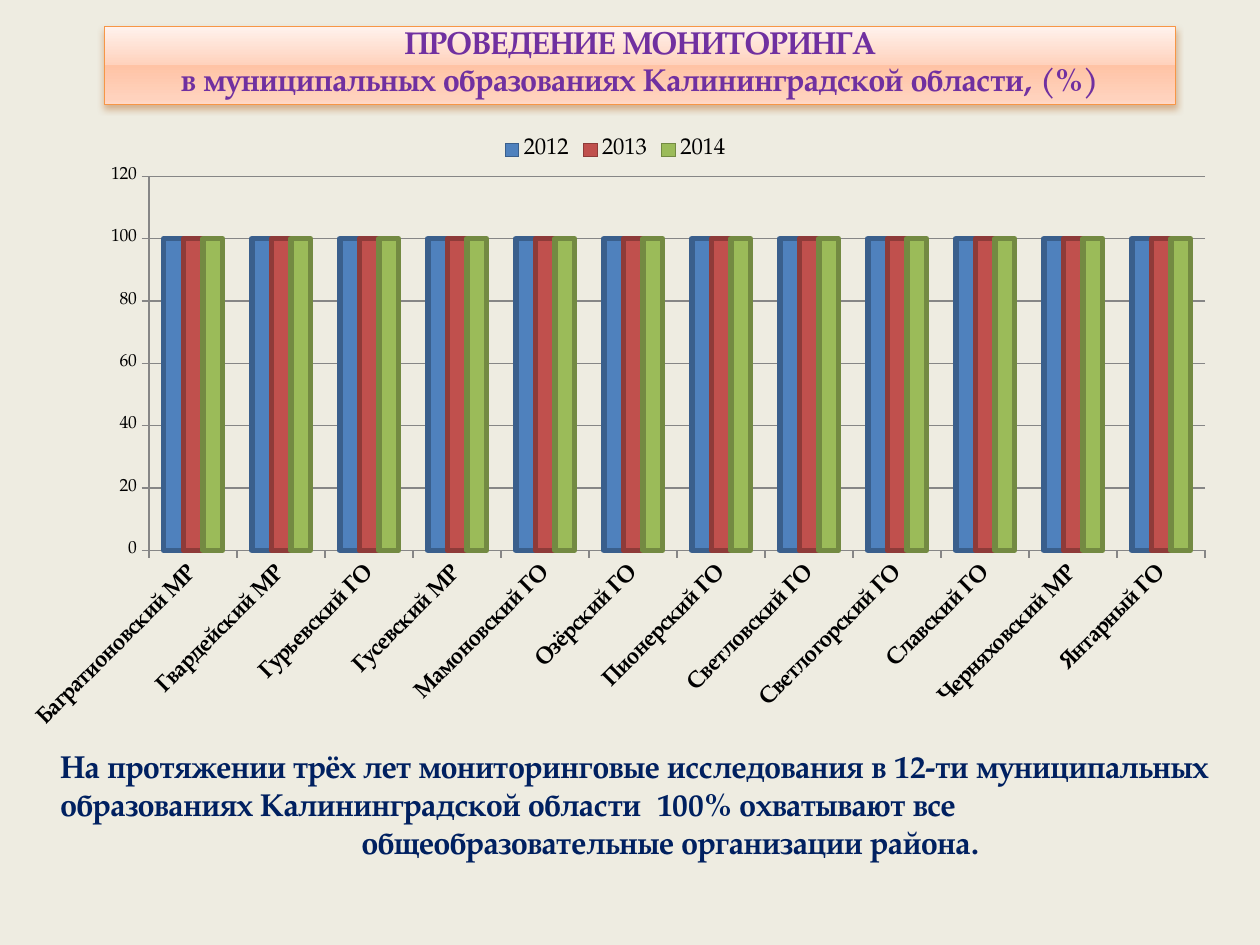
from dataclasses import dataclass

from lxml.etree import SubElement
from pptx import Presentation
from pptx.chart.data import CategoryChartData
from pptx.dml.color import RGBColor
from pptx.enum.chart import XL_CHART_TYPE as Kind, XL_LEGEND_POSITION as Spot, XL_TICK_MARK as Tick
from pptx.enum.text import MSO_ANCHOR as Anchor, MSO_AUTO_SIZE as Fit, PP_ALIGN as Align
from pptx.oxml import parse_xml
from pptx.oxml.ns import nsdecls, qn
from pptx.util import Inches, Pt


@dataclass(frozen=True)
class Theme:
    face: str = "TeX Gyre Pagella"
    back: str = "EEECE1"
    head: str = "7030A0"
    edge: str = "F79646"
    shade: str = "AD560F"
    note: str = "002060"
    ink: str = "000000"
    grid: str = "868686"
    glow: tuple = ((0, "FFF2ED"), (49, "FFD2BD"), (49, "FFC3A5"), (92, "FFD2BD"), (100, "FFD9C8"))
    bars: tuple = (("4F81BD", "3A5F8C"), ("C0504D", "8E3B39"), ("9BBB59", "738A42"))
    large: int = 18
    mid: int = 13
    small: int = 10


AREAS = ["Багратионовский МР", "Гвардейский МР", "Гурьевский ГО", "Гусевский МР",
         "Мамоновский ГО", "Озёрский ГО", "Пионерский ГО", "Светловский ГО",
         "Светлогорский ГО", "Славский ГО", "Черняховский МР", "Янтарный ГО"]
YEARS = ["2012", "2013", "2014"]
HEAD = "ПРОВЕДЕНИЕ МОНИТОРИНГА\vв муниципальных образованиях Калининградской области, (%)"
NOTE = ("На протяжении трёх лет мониторинговые исследования в 12-ти муниципальных "
        "образованиях Калининградской области  100% охватывают все")
TAIL = "общеобразовательные организации района."


def tint(code):
    return RGBColor.from_string(code)


def place(shape, box):
    shape.left, shape.top, shape.width, shape.height = map(Inches, box)


class Deck:
    def __init__(self, theme):
        self.theme = theme
        self.file = Presentation()
        self.file.slide_width, self.file.slide_height = Inches(10), Inches(7.5)
        self.slide = self.file.slides.add_slide(self.file.slide_layouts[1])
        fill = self.slide.background.fill
        fill.solid()
        fill.fore_color.rgb = tint(theme.back)

    def font(self, font, size, color, bold=False):
        font.name, font.size, font.bold = self.theme.face, Pt(size), bold
        font.color.rgb = tint(color)

    def text(self, para, words, *, color, align=Align.CENTER, before=0, indent=0):
        para.text = words
        para.alignment, para.space_before = align, Pt(before)
        for run in para.runs:
            self.font(run.font, self.theme.large, color, True)
        props = para._p.get_or_add_pPr()
        props.set("marL", str(Inches(indent)))
        props.set("indent", "0")
        SubElement(props, qn("a:buNone"))

    def title(self, words, box):
        shape, theme = self.slide.shapes.title, self.theme
        place(shape, box)
        shape.line.color.rgb, shape.line.width = tint(theme.edge), Pt(0.9)
        stops = "".join(f'<a:gs pos="{pos * 1000}"><a:srgbClr val="{code}"/></a:gs>'
                        for pos, code in theme.glow)
        props = shape._element.spPr
        props.find(qn("a:ln")).addprevious(parse_xml(
            f'<a:gradFill {nsdecls("a")} rotWithShape="1"><a:gsLst>{stops}</a:gsLst>'
            '<a:lin ang="5400000" scaled="0"/></a:gradFill>'))
        props.append(parse_xml(
            f'<a:effectLst {nsdecls("a")}><a:outerShdw blurRad="{Pt(4)}" dist="{Pt(2)}" '
            f'dir="5400000" rotWithShape="0"><a:srgbClr val="{theme.shade}">'
            '<a:alpha val="38000"/></a:srgbClr></a:outerShdw></a:effectLst>'))
        frame = shape.text_frame
        frame.auto_size, frame.vertical_anchor = Fit.NONE, Anchor.BOTTOM
        self.text(frame.paragraphs[0], words, color=theme.head)

    def body(self, words, tail, box):
        shape = self.slide.placeholders[1]
        place(shape, box)
        frame = shape.text_frame
        frame.auto_size = Fit.NONE
        color = self.theme.note
        self.text(frame.paragraphs[0], words, color=color, align=Align.LEFT,
                  before=3.6, indent=0.03)
        self.text(frame.add_paragraph(), tail, color=color, indent=0.57)

    def chart(self, names, rows, box, plot):
        theme = self.theme
        data = CategoryChartData()
        data.categories = names
        for name, vals in rows.items():
            data.add_series(name, vals)
        chart = self.slide.shapes.add_chart(
            Kind.COLUMN_CLUSTERED, *map(Inches, box), data).chart
        chart.has_title = False
        self.font(chart.font, theme.small, theme.ink)
        chart.has_legend = True
        chart.legend.position, chart.legend.include_in_layout = Spot.TOP, False
        self.font(chart.legend.font, theme.mid, theme.ink)
        bars = chart.plots[0]
        bars.gap_width, bars.overlap, bars.vary_by_categories = 150, 0, False
        for row, (face, edge) in zip(bars.series, theme.bars):
            row.format.fill.solid()
            row.format.fill.fore_color.rgb = tint(face)
            row.format.line.color.rgb = tint(edge)
            row.format.line.width = Pt(3.15)
        self.axes(chart)
        self.layout(chart, plot)

    def axes(self, chart):
        theme = self.theme
        cat, val = chart.category_axis, chart.value_axis
        val.minimum_scale, val.maximum_scale, val.major_unit = 0, 120, 20
        val.has_major_gridlines = True
        for part in (cat, val, val.major_gridlines):
            part.format.line.color.rgb = tint(theme.grid)
        cat.major_tick_mark = val.major_tick_mark = Tick.OUTSIDE
        self.font(cat.tick_labels.font, theme.mid, theme.ink, True)
        self.font(val.tick_labels.font, theme.small, theme.ink)
        cat._element.find(qn("c:txPr")).find(qn("a:bodyPr")).set("rot", "-2700000")

    def layout(self, chart, plot):
        """Fix the inner plot area, in fractions of the chart."""
        area = chart._chartSpace.chart.plotArea
        for old in area.findall(qn("c:layout")):
            area.remove(old)
        sizes = "".join(f'<c:{key} val="{num}"/>' for key, num in zip("xywh", plot))
        area.insert(0, parse_xml(
            f'<c:layout {nsdecls("c")}><c:manualLayout><c:layoutTarget val="inner"/>'
            f'<c:xMode val="edge"/><c:yMode val="edge"/>{sizes}'
            '</c:manualLayout></c:layout>'))


def main():
    deck = Deck(Theme())
    deck.title(HEAD, (0.83, 0.21, 8.5, 0.62))
    deck.body(NOTE, TAIL, (0.35, 5.88, 9.37, 1.02))
    full = [100] * len(AREAS)
    deck.chart(AREAS, {year: full for year in YEARS},
               (0.2, 0.99, 9.37, 5.12), (0.105, 0.08, 0.895, 0.58))
    deck.file.save("out.pptx")


if __name__ == "__main__":
    main()
